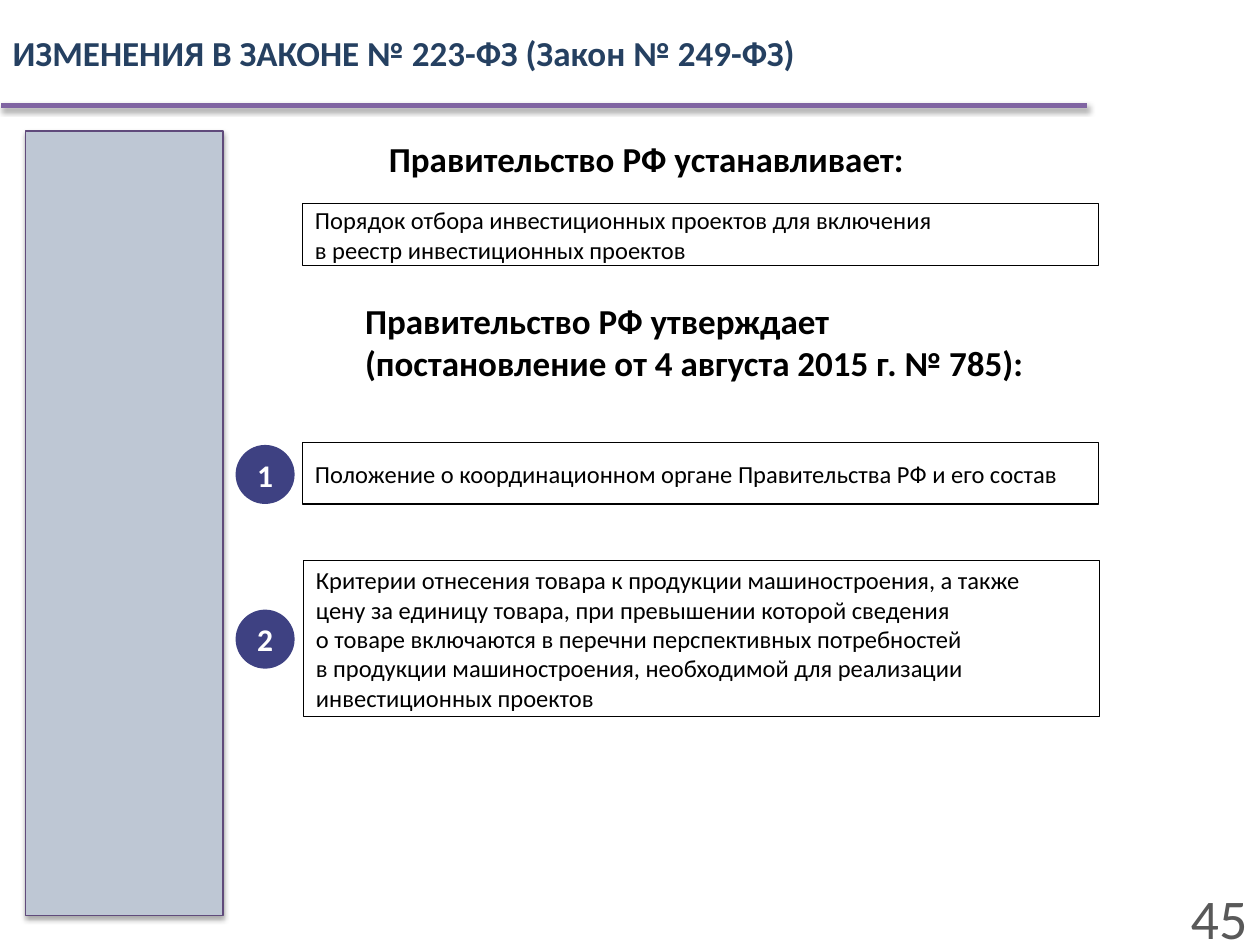
from lxml import etree
from pptx import Presentation
from pptx import util as u
from pptx.dml.color import RGBColor
from pptx.enum import shapes, text
from pptx.oxml.ns import qn

COLORS = {
    "title": "254061", "rule": "8064A2", "panel": "BEC7D4", "panel_line": "604A7B",
    "badge": "3E4182", "number": "595959", "black": "000000", "white": "FFFFFF",
}


def color(name):
    return RGBColor.from_string(COLORS[name])


def write(box, content, size=14, shade="black", bold=False,
          align=text.PP_ALIGN.LEFT, anchor=text.MSO_ANCHOR.MIDDLE,
          fit=text.MSO_AUTO_SIZE.NONE):
    """Fill a shape with text, one paragraph per line."""
    frame = box.text_frame
    frame.word_wrap = True
    frame.auto_size = fit
    frame.vertical_anchor = anchor
    frame.text = content
    for para in frame.paragraphs:
        para.alignment = align
        for span in para.runs:
            span.font.name = "Calibri"
            span.font.size = u.Pt(size)
            span.font.bold = bold
            span.font.color.rgb = color(shade)


deck = Presentation()
deck.slide_width, deck.slide_height = u.Cm(25.4), u.Cm(19.05)
page = deck.slides.add_slide(deck.slide_layouts[5])

# Title
title = page.shapes.title
title.left, title.top, title.width, title.height = u.Cm(0), u.Cm(0), u.Cm(21.92), u.Cm(2.11)
write(title, "ИЗМЕНЕНИЯ В ЗАКОНЕ № 223-ФЗ (Закон № 249-ФЗ)", size=20, shade="title", bold=True)

# Rule under the title
rule = page.shapes.add_connector(
    shapes.MSO_CONNECTOR.STRAIGHT, u.Cm(0.03), u.Cm(2.13), u.Cm(21.92), u.Cm(2.13))
rule.line.color.rgb = color("rule")
rule.line.width = u.Pt(3)

# Side panel
panel = page.shapes.add_shape(
    shapes.MSO_SHAPE.RECTANGLE, u.Cm(0.51), u.Cm(2.64), u.Cm(3.99), u.Cm(15.82))
panel.fill.solid()
panel.fill.fore_color.rgb = color("panel")
panel.line.color.rgb = color("panel_line")
panel.line.width = u.Pt(0.75)

# Soft shadow below the rule and the panel
for shape in (rule, panel):
    effects = etree.SubElement(shape.element.spPr, qn("a:effectLst"))
    shadow = etree.SubElement(effects, qn("a:outerShdw"), blurRad=str(u.Pt(3.1)),
                              dist=str(u.Pt(1.8)), dir="5400000", rotWithShape="0")
    tint = etree.SubElement(shadow, qn("a:srgbClr"), val=COLORS["black"])
    etree.SubElement(tint, qn("a:alpha"), val="35000")

# Headings
headings = [
    (7.59, 2.64, 11.61, 1.12, "Правительство РФ устанавливает:"),
    (7.11, 5.92, 15.39, 1.96,
     "Правительство РФ утверждает\n(постановление от 4 августа 2015 г. № 785):"),
]
for left, top, width, height, content in headings:
    heading = page.shapes.add_textbox(u.Cm(left), u.Cm(top), u.Cm(width), u.Cm(height))
    write(heading, content, size=20, bold=True, anchor=text.MSO_ANCHOR.TOP,
          fit=text.MSO_AUTO_SIZE.SHAPE_TO_FIT_TEXT)

# Framed statements
statements = [
    (6.1, 4.11, 1.24, "Порядок отбора инвестиционных проектов для включения\n"
                      "в реестр инвестиционных проектов"),
    (6.1, 8.92, 1.24, "Положение о координационном органе Правительства РФ и его состав"),
    (6.12, 11.3, 3.15, "Критерии отнесения товара к продукции машиностроения, а также\n"
                       "цену за единицу товара, при превышении которой сведения\n"
                       "о товаре включаются в перечни перспективных потребностей\n"
                       "в продукции машиностроения, необходимой для реализации\n"
                       "инвестиционных проектов"),
]
for left, top, height, content in statements:
    frame = page.shapes.add_shape(
        shapes.MSO_SHAPE.PENTAGON, u.Cm(left), u.Cm(top), u.Cm(16.05), u.Cm(height))
    frame.adjustments[0] = 0
    frame.shadow.inherit = False
    frame.fill.solid()
    frame.fill.fore_color.rgb = color("white")
    frame.line.color.rgb = color("black")
    frame.line.width = u.Pt(0.75)
    write(frame, content)

# Numbered badges
for number, top in enumerate((8.97, 12.29), start=1):
    badge = page.shapes.add_shape(
        shapes.MSO_SHAPE.OVAL, u.Cm(4.75), u.Cm(top), u.Cm(1.19), u.Cm(1.19))
    badge.shadow.inherit = False
    badge.fill.solid()
    badge.fill.fore_color.rgb = color("badge")
    badge.line.fill.background()
    write(badge, str(number), size=18, shade="white", bold=True, align=text.PP_ALIGN.CENTER)

# Page number
page_number = page.shapes.add_textbox(u.Cm(23.72), u.Cm(17.91), u.Cm(1.68), u.Cm(1.14))
write(page_number, "45", size=32, shade="number", align=text.PP_ALIGN.RIGHT)

deck.save("out.pptx")
